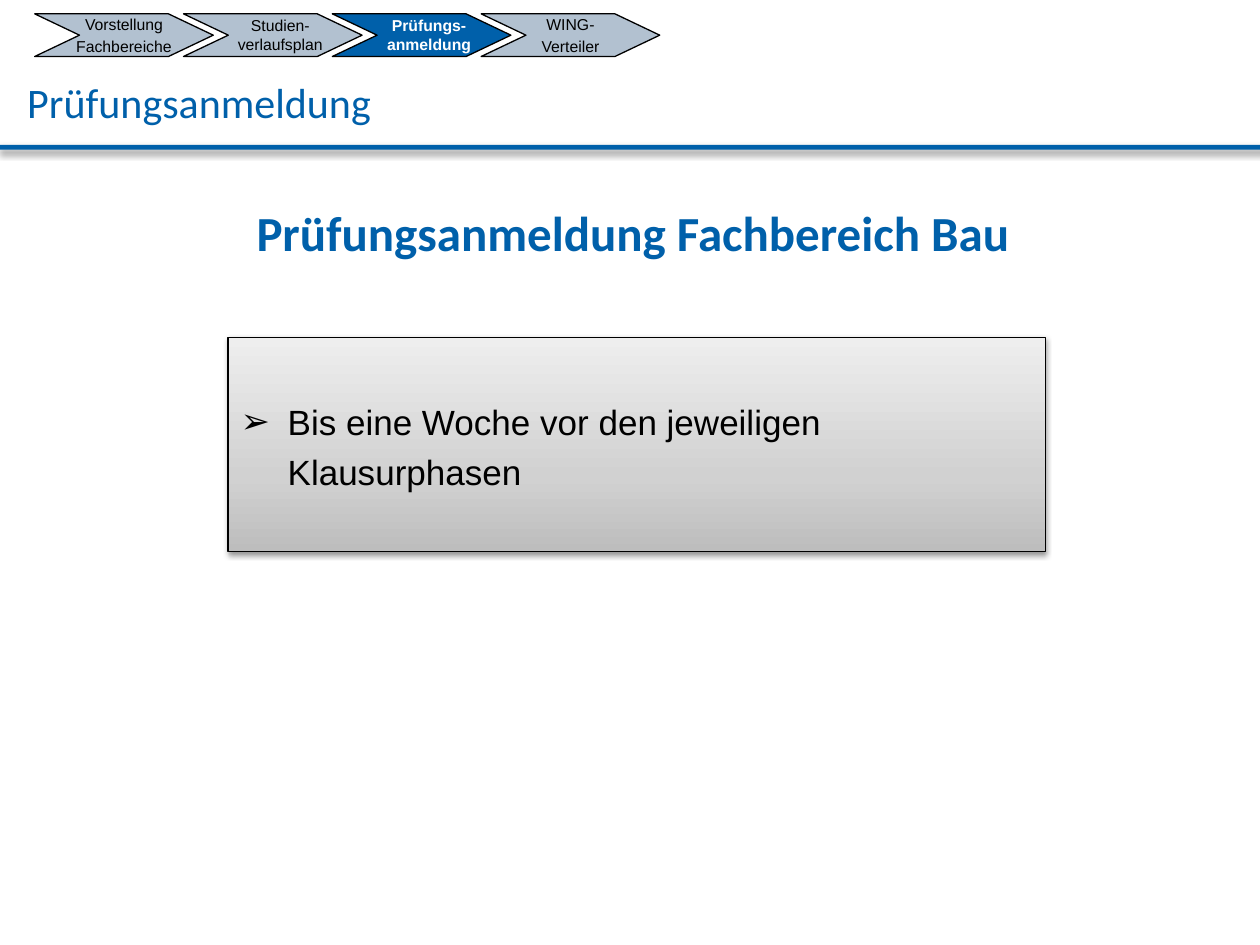
from dataclasses import dataclass

from lxml import etree
from pptx import Presentation
from pptx.dml.color import RGBColor
from pptx.enum import shapes, text
from pptx.oxml import ns
from pptx.util import Cm, Pt


@dataclass(frozen=True)
class Theme:
    blue: str = "0060AA"
    navy: str = "003366"
    black: str = "000000"
    white: str = "FFFFFF"
    grey: str = "808080"
    panel_stops: tuple = ((0, "BDBDBD"), (35, "D1D1D1"), (100, "EEEEEE"))
    heading_font: str = "Calibri"
    body_font: str = "Arial"
    step_size: float = 9
    body_size: float = 20
    title_size: float = 24
    heading_size: float = 28
    outline: float = 0.75
    line_spacing: float = 1.2


@dataclass(frozen=True)
class Box:
    left: float
    top: float
    width: float
    height: float

    def lengths(self) -> tuple:
        return tuple(Cm(v) for v in (self.left, self.top, self.width, self.height))


@dataclass(frozen=True)
class Step:
    label: str
    shift: float = 0
    active: bool = False


THEME = Theme()
STEPS = (
    Step("Vorstellung\nFachbereiche"),
    Step("Studien-\vverlaufsplan", shift=0.15),
    Step("Prüfungs-\vanmeldung", shift=0.15, active=True),
    Step("WING-\nVerteiler"),
)
FIRST_STEP = Box(0.7, 0.28, 3.6, 0.86)
STEP_PITCH = 3.0


def child(parent, tag: str, **attrs):
    el = etree.SubElement(parent, ns.qn(tag))
    for name, value in attrs.items():
        el.set(name, str(value))
    return el


def add_shape(slide, kind, box: Box, fill: str, line: str = "", width: float = 0):
    sp = slide.shapes.add_shape(kind, *box.lengths())
    sp.shadow.inherit = False
    sp.fill.solid()
    sp.fill.fore_color.rgb = RGBColor.from_string(fill)
    if line:
        sp.line.color.rgb = RGBColor.from_string(line)
        sp.line.width = Pt(width)
    else:
        sp.line.fill.background()
    return sp


def add_shadow(sp, color: str, alpha: int, blur: float, distance: float) -> None:
    """Cast an outer shadow straight down."""
    effects = sp._element.spPr.find(ns.qn("a:effectLst"))
    shadow = child(effects, "a:outerShdw", blurRad=Pt(blur), dist=Pt(distance),
                   dir=90 * 60000, algn="t", rotWithShape=0)
    child(child(shadow, "a:srgbClr", val=color), "a:alpha", val=alpha * 1000)


def set_gradient(sp, stops: tuple) -> None:
    """Fill from bottom to top with (percent, colour) stops."""
    sp.fill.gradient()
    sp.fill.gradient_angle = 90
    stop_list = sp._element.spPr.find(".//" + ns.qn("a:gsLst"))
    for old in list(stop_list):
        stop_list.remove(old)
    for position, color in stops:
        child(child(stop_list, "a:gs", pos=position * 1000), "a:srgbClr", val=color)


def write(sp, words: str, font: str, size: float, color: str, bold: bool = False,
          align=text.PP_ALIGN.LEFT, anchor=text.MSO_ANCHOR.TOP,
          spacing: float = 1.0, wrap: bool = True):
    tf = sp.text_frame
    tf.text = words
    tf.word_wrap = wrap
    tf.vertical_anchor = anchor
    for p in tf.paragraphs:
        p.alignment = align
        p.line_spacing = spacing
        for r in p.runs:
            r.font.name = font
            r.font.size = Pt(size)
            r.font.bold = bold
            r.font.color.rgb = RGBColor.from_string(color)
    return tf


def add_step(slide, index: int, step: Step) -> None:
    box = Box(FIRST_STEP.left + index * STEP_PITCH, FIRST_STEP.top,
              FIRST_STEP.width, FIRST_STEP.height)
    sp = add_shape(slide, shapes.MSO_SHAPE.CHEVRON, box,
                   THEME.blue if step.active else THEME.navy,
                   THEME.black, THEME.outline)
    sp.adjustments[0] = 1.05
    if not step.active:
        color = sp._element.spPr.find(ns.qn("a:solidFill"))[0]
        child(color, "a:alpha", val=30000)
    tf = write(sp, step.label, THEME.body_font, THEME.step_size,
               THEME.white if step.active else THEME.black, step.active,
               text.PP_ALIGN.CENTER, text.MSO_ANCHOR.MIDDLE, wrap=False)
    tf.margin_left = Cm(0.25 + step.shift)
    tf.margin_right = Cm(0.25 - step.shift)
    for p in tf.paragraphs[1:]:
        p.space_before = Pt(0.2 * THEME.step_size)


def add_titles(slide) -> None:
    rule = add_shape(slide, shapes.MSO_SHAPE.RECTANGLE, Box(0, 2.92, 26, 0.1), THEME.blue)
    add_shadow(rule, THEME.grey, 100, 4, 2)

    title = slide.shapes.add_textbox(*Box(0.3, 1.22, 18.4, 1.3).lengths())
    write(title, "Prüfungsanmeldung", THEME.heading_font, THEME.title_size,
          THEME.blue, spacing=THEME.line_spacing)

    heading = add_shape(slide, shapes.MSO_SHAPE.RECTANGLE, Box(0.36, 3.73, 25.04, 2.8),
                        THEME.white, THEME.white, 2)
    tf = write(heading, "Prüfungsanmeldung Fachbereich Bau", THEME.heading_font,
               THEME.heading_size, THEME.blue, True, text.PP_ALIGN.CENTER,
               spacing=THEME.line_spacing)
    tf.margin_right = Cm(0.5)


def add_deadline_panel(slide) -> None:
    sp = add_shape(slide, shapes.MSO_SHAPE.RECTANGLE, Box(4.6, 6.8, 16.48, 4.32),
                   THEME.white, THEME.black, THEME.outline)
    set_gradient(sp, THEME.panel_stops)
    add_shadow(sp, THEME.black, 38, 3.1, 1.6)
    tf = write(sp, "Bis eine Woche vor den jeweiligen Klausurphasen", THEME.body_font,
               THEME.body_size, THEME.black, spacing=THEME.line_spacing)
    tf.margin_top = Cm(1.1)
    props = tf.paragraphs[0]._p.get_or_add_pPr()
    props.set("marL", str(Cm(0.95)))
    props.set("indent", str(-Cm(0.95)))
    child(child(props, "a:buClr"), "a:srgbClr", val=THEME.black)
    child(props, "a:buFont", typeface="Wingdings")
    props[-1].set("typeface", THEME.body_font)
    child(props, "a:buChar", char="➢")


def main() -> None:
    prs = Presentation()
    prs.slide_width, prs.slide_height = Cm(25.4), Cm(19.05)
    slide = prs.slides.add_slide(prs.slide_layouts[6])
    add_titles(slide)
    for index, step in enumerate(STEPS):
        add_step(slide, index, step)
    add_deadline_panel(slide)
    prs.save("out.pptx")


if __name__ == "__main__":
    main()
